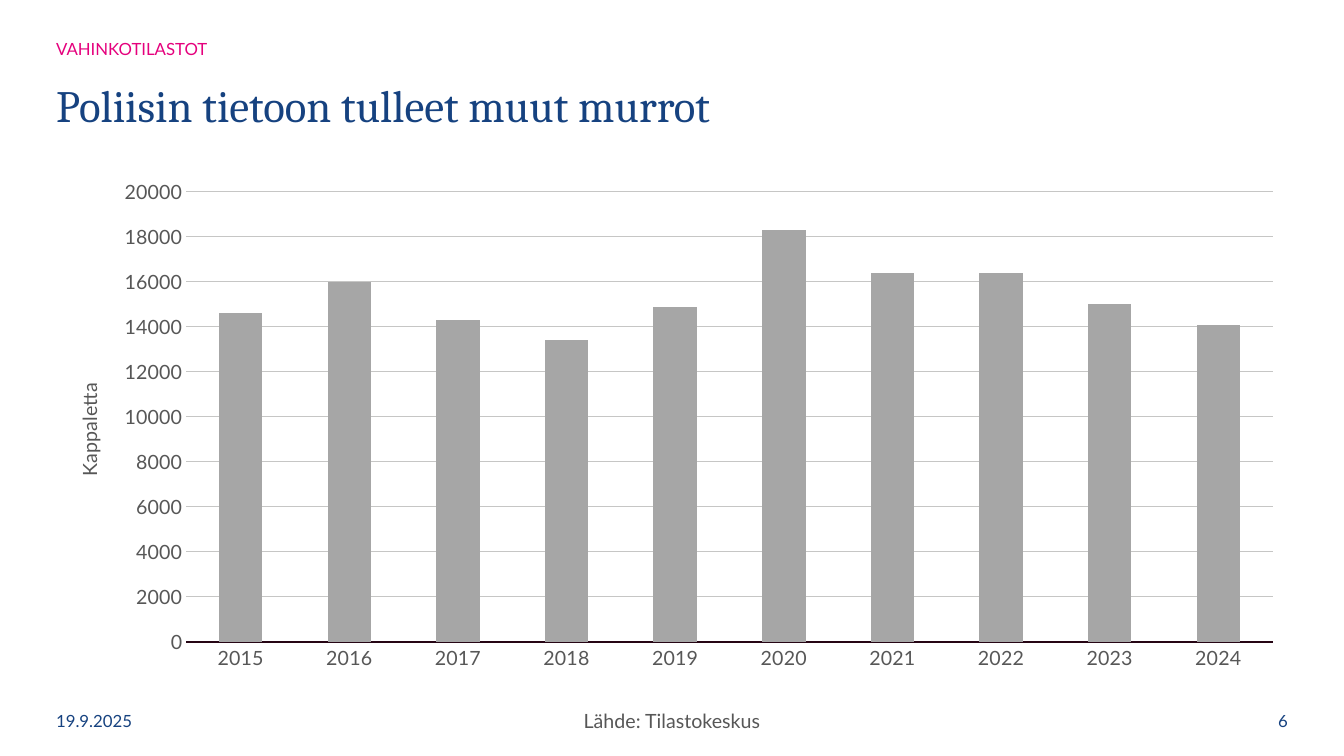
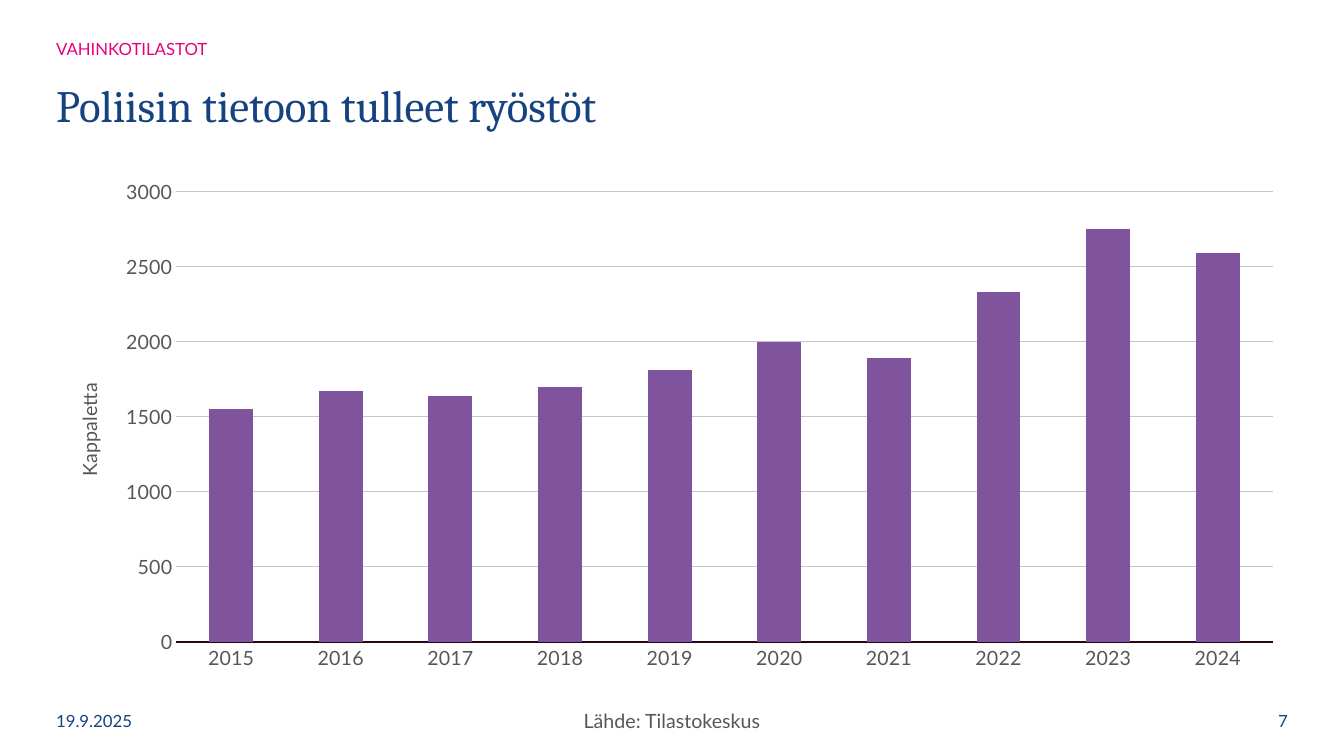
from dataclasses import dataclass

from lxml import etree
from pptx import Presentation
from pptx import util as u
from pptx.chart import data as chart_data
from pptx.dml.color import RGBColor
from pptx.enum import chart as charts, text
from pptx.oxml.ns import qn

Pt = u.Pt


@dataclass(frozen=True)
class Theme:
    # Colours
    navy: str = "164280"
    pink: str = "E5007D"
    body: str = "575757"
    grid: str = "C6C6C5"
    baseline: str = "260514"
    grey: str = "A6A6A6"
    purple: str = "80539D"
    # Fonts and sizes
    heading_font: str = "Cambria"
    text_font: str = "Lato"
    title_size: float = 32
    chart_size: float = 14
    small_size: float = 12
    hairline: float = 0.75
    # Layout in points
    width: float = 960
    height: float = 540
    margin: float = 33
    text_width: float = 832
    footer_top: float = 500.5
    footer_height: float = 29


THEME = Theme()
YEARS = [str(year) for year in range(2015, 2025)]


class Deck:
    def __init__(self, theme):
        self.theme = theme
        self.deck = Presentation()
        self.deck.slide_width = Pt(theme.width)
        self.deck.slide_height = Pt(theme.height)
        self.slide = None

    def style(self, font, size, color, name=None):
        font.name = name or self.theme.text_font
        font.size = Pt(size)
        font.bold = False
        font.color.rgb = RGBColor.from_string(color)

    def label(self, words, box, size, color, font=None, align=text.PP_ALIGN.LEFT,
              anchor=text.MSO_ANCHOR.MIDDLE, spacing=1.0, wrap=True):
        frame = self.slide.shapes.add_textbox(*map(Pt, box)).text_frame
        frame.word_wrap = wrap
        frame.vertical_anchor = anchor
        frame.text = words
        paragraph = frame.paragraphs[0]
        paragraph.alignment = align
        paragraph.line_spacing = spacing
        self.style(paragraph.runs[0].font, size, color, font)

    def start_slide(self, title, number):
        t = self.theme
        self.slide = self.deck.slides.add_slide(self.deck.slide_layouts[6])
        # Heading
        self.label("VAHINKOTILASTOT", (t.margin, 21, t.text_width, 16), t.small_size,
                   t.pink, anchor=text.MSO_ANCHOR.TOP, spacing=1.2)
        self.label(title, (t.margin, 43, t.text_width, 69), t.title_size, t.navy,
                   t.heading_font, spacing=0.9)
        # Footer
        side = 85
        self.label("19.9.2025", (t.margin, t.footer_top, side, t.footer_height),
                   t.small_size, t.navy)
        self.label(str(number), (t.width - t.margin - side, t.footer_top, side, t.footer_height),
                   t.small_size, t.navy, align=text.PP_ALIGN.RIGHT)
        source = 154
        self.label("Lähde: Tilastokeskus", ((t.width - source) / 2, 502.5, source, 24.5),
                   t.chart_size, t.body, align=text.PP_ALIGN.CENTER, wrap=False)

    def place(self, parent, index, **settings):
        """Give a chart part a manual layout, as fractions of the chart."""
        old = parent.find(qn("c:layout"))
        if old is not None:
            parent.remove(old)
        layout = etree.Element(qn("c:layout"))
        manual = etree.SubElement(layout, qn("c:manualLayout"))
        for tag, value in settings.items():
            etree.SubElement(manual, qn(f"c:{tag}")).set("val", str(value))
        parent.insert(index, layout)

    def columns(self, kind, counts, color, top, step, plot_left):
        t = self.theme
        data = chart_data.CategoryChartData()
        data.categories = YEARS
        data.add_series("Series 1", counts)
        box = (t.margin, 121, t.width - 2 * t.margin, 365)
        chart = self.slide.shapes.add_chart(kind, *map(Pt, box), data).chart
        chart.has_title = False
        chart.has_legend = False
        self.style(chart.font, t.chart_size, t.body)

        # Columns
        plot = chart.plots[0]
        plot.gap_width = 150
        plot.vary_by_categories = False
        fill = plot.series[0].format.fill
        fill.solid()
        fill.fore_color.rgb = RGBColor.from_string(color)

        # Axes
        years, amounts = chart.category_axis, chart.value_axis
        for axis in (years, amounts):
            axis.major_tick_mark = axis.minor_tick_mark = charts.XL_TICK_MARK.NONE
            self.style(axis.tick_labels.font, t.chart_size, t.body)
        amounts.minimum_scale, amounts.maximum_scale = 0, top
        amounts.major_unit = step
        amounts.format.line.fill.background()
        amounts.has_major_gridlines = True
        for line, shade in ((years.format.line, t.baseline),
                            (amounts.major_gridlines.format.line, t.grid)):
            line.color.rgb = RGBColor.from_string(shade)
            line.width = Pt(t.hairline)

        # Axis title and plot position
        heading = amounts.axis_title
        heading.text_frame.text = "Kappaletta"
        self.style(heading.text_frame.paragraphs[0].runs[0].font, t.chart_size, t.body)
        self.place(heading.text_frame._txBody.getparent().getparent(), 1,
                   xMode="edge", yMode="edge", x=0.02, y=0.41)
        self.place(plot._element.getparent(), 0, layoutTarget="inner", xMode="edge",
                   yMode="edge", x=plot_left, y=0.044, w=round(0.98 - plot_left, 3), h=0.881)


def main():
    deck = Deck(THEME)

    # Other burglaries
    deck.start_slide("Poliisin tietoon tulleet muut murrot", 6)
    deck.columns(charts.XL_CHART_TYPE.COLUMN_CLUSTERED,
                 (14600, 16000, 14300, 13400, 14900, 18300, 16400, 16400, 15000, 14100),
                 THEME.grey, 20000, 2000, 0.112)

    # Robberies
    deck.start_slide("Poliisin tietoon tulleet ryöstöt", 7)
    deck.columns(charts.XL_CHART_TYPE.COLUMN_STACKED,
                 (1550, 1670, 1640, 1700, 1810, 2000, 1890, 2330, 2750, 2590),
                 THEME.purple, 3000, 500, 0.104)

    deck.deck.save("out.pptx")


if __name__ == "__main__":
    main()
